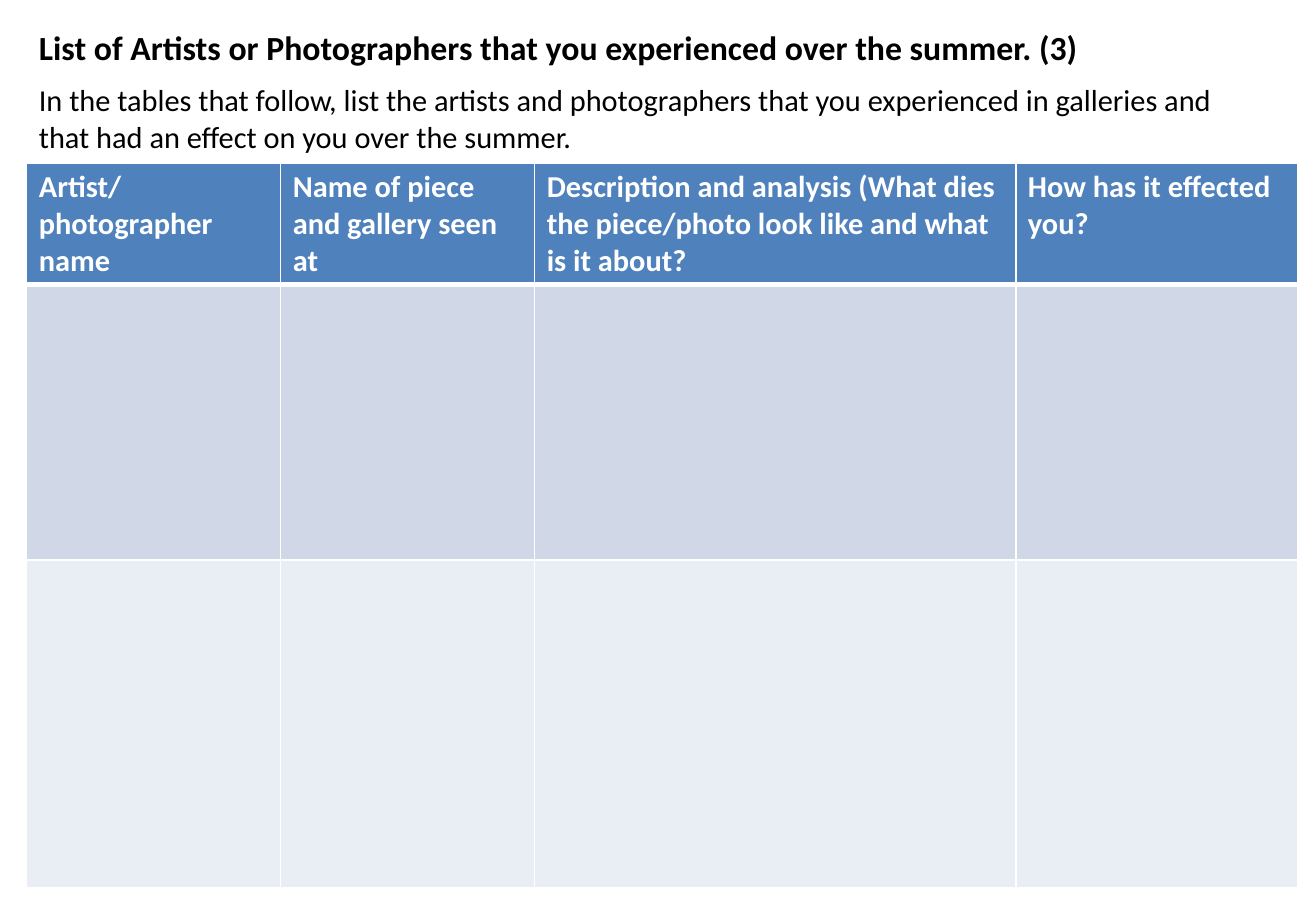
from lxml.etree import SubElement as Sub
from pptx import Presentation
from pptx.dml.color import RGBColor as Rgb
from pptx.enum.text import MSO_ANCHOR as Anchor, MSO_AUTO_SIZE as Fit, PP_ALIGN as Align
from pptx.oxml.ns import qn
from pptx.util import Inches, Pt

FONT = "Calibri"
HUES = {"text": "000000", "white": "FFFFFF", "head": "4F81BD",
        "dark": "D0D8E8", "light": "E9EDF4"}
WIDE, HIGH = 10.83, 7.5
LEFT = 0.22

TITLE = "List of Artists or Photographers that you experienced over the summer. (3)"
INTRO = ("In the tables that follow, list the artists and photographers that you "
         "experienced in galleries and that had an effect on you over the summer.")
HEADS = ["Artist/photographer name",
         "Name of piece and gallery seen at",
         "Description and analysis (What dies the piece/photo look like and what is it about?",
         "How has it effected you?"]
COLS = [2.09, 2.09, 3.96, 2.32]
ROWS = [("head", 0.9), ("dark", 2.27), ("light", 2.7)]
TOP = 1.34
TEXTS = [(TITLE, 0.17, 9.21, 0.44, 20, True),
         (INTRO, 0.62, 10.08, 0.71, 18, False)]


def style(frame, size, hue, bold):
    para = frame.paragraphs[0]
    para.alignment = Align.LEFT
    for run in para.runs:
        font = run.font
        font.name, font.size, font.bold = FONT, Pt(size), bold
        font.color.rgb = Rgb.from_string(HUES[hue])


def place(shape, text, top, wide, high, size, bold):
    shape.left, shape.top = Inches(LEFT), Inches(top)
    shape.width, shape.height = Inches(wide), Inches(high)
    frame = shape.text_frame
    frame.text = text
    frame.word_wrap = True
    frame.auto_size = Fit.SHAPE_TO_FIT_TEXT
    frame.vertical_anchor = Anchor.TOP
    para = frame.paragraphs[0]
    para.space_before = Pt(0)
    style(frame, size, "text", bold)
    props = para._p.get_or_add_pPr()
    props.set("marL", "0")
    props.set("indent", "0")
    Sub(props, qn("a:buNone"))


def edge(cell, row):
    props = cell._tc.get_or_add_tcPr()
    thick = {"T": 3 if row == 1 else 1, "B": 3 if row == 0 else 1}
    for spot, side in enumerate("LRTB"):
        line = Sub(props, qn(f"a:ln{side}"), w=str(Pt(thick.get(side, 1))))
        Sub(Sub(line, qn("a:solidFill")), qn("a:srgbClr"), val=HUES["white"])
        props.insert(spot, line)


def grid(slide):
    high = sum(size for _, size in ROWS)
    table = slide.shapes.add_table(
        len(ROWS), len(COLS), Inches(LEFT), Inches(TOP),
        Inches(sum(COLS)), Inches(high)).table
    for col, size in zip(table.columns, COLS):
        col.width = Inches(size)
    for row, (hue, size) in enumerate(ROWS):
        table.rows[row].height = Inches(size)
        for col, head in enumerate(HEADS):
            cell = table.cell(row, col)
            cell.fill.solid()
            cell.fill.fore_color.rgb = Rgb.from_string(HUES[hue])
            edge(cell, row)
            if row == 0:
                cell.text_frame.text = head
                style(cell.text_frame, 18, "white", True)


def main():
    deck = Presentation()
    deck.slide_width, deck.slide_height = Inches(WIDE), Inches(HIGH)
    slide = deck.slides.add_slide(deck.slide_layouts[1])
    for shape, item in zip(slide.placeholders, TEXTS):
        place(shape, *item)
    grid(slide)
    deck.save("out.pptx")


if __name__ == "__main__":
    main()
